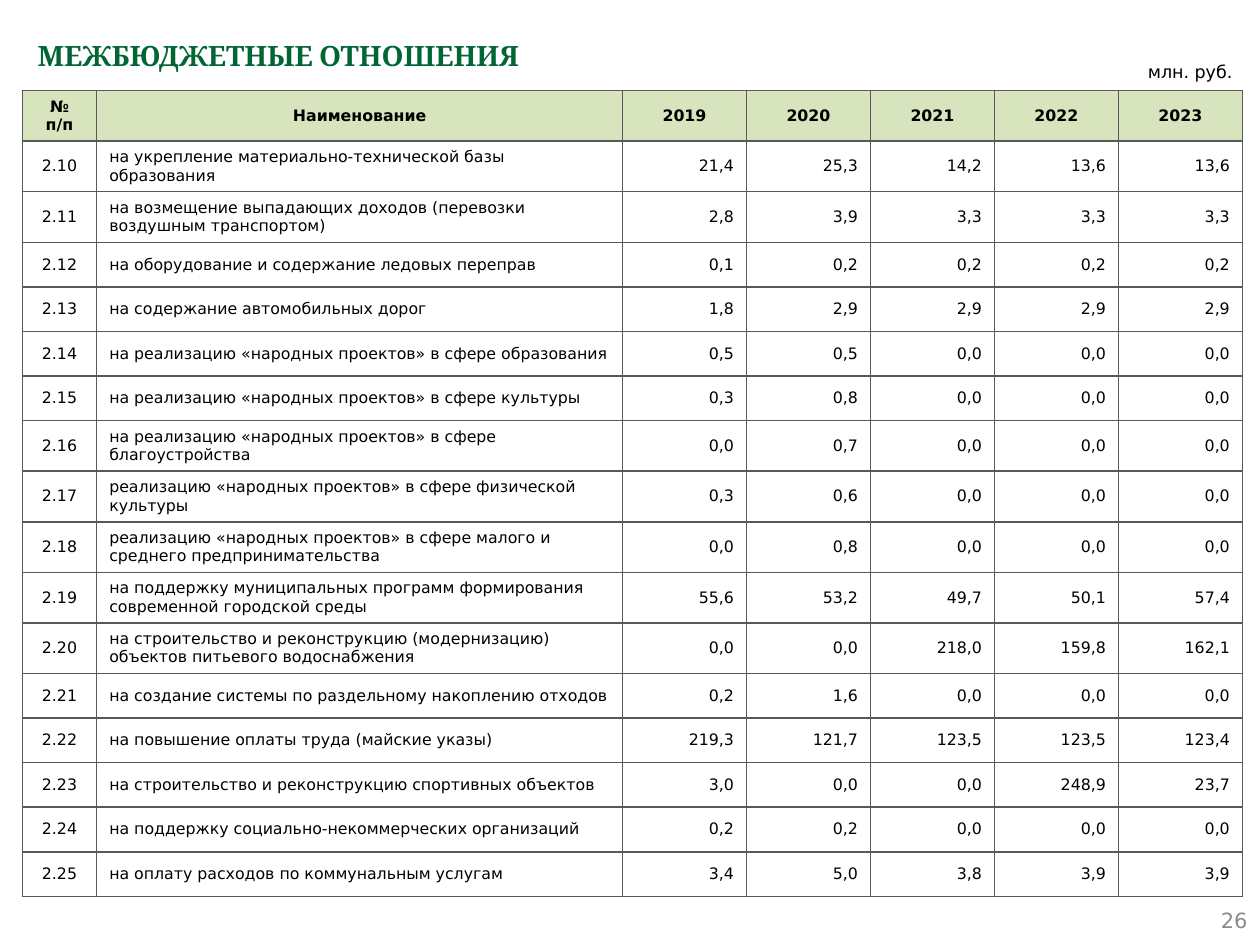
import pptx
import pptx.util
import pptx.dml.color
import pptx.enum.text
import pptx.enum.shapes
import pptx.oxml
import pptx.oxml.ns

Pt = pptx.util.Pt
ALIGN = pptx.enum.text.PP_ALIGN
MIDDLE = pptx.enum.text.MSO_ANCHOR.MIDDLE
SANS = "DejaVu Sans"
WIDTHS = [42.5, 300.5] + [70.85] * 5
SHORT, TALL = 25.5, 28.4
HEAD = ["№ п/п", "Наименование", "2019", "2020", "2021", "2022", "2023"]
FIRST = 10
ROWS = [
    ("на укрепление материально-технической базы образования", "21,4 25,3 14,2 13,6 13,6"),
    ("на возмещение выпадающих доходов (перевозки воздушным транспортом)", "2,8 3,9 3,3 3,3 3,3"),
    ("на оборудование и содержание ледовых переправ", "0,1 0,2 0,2 0,2 0,2"),
    ("на содержание автомобильных дорог", "1,8 2,9 2,9 2,9 2,9"),
    ("на реализацию «народных проектов» в сфере образования", "0,5 0,5 0,0 0,0 0,0"),
    ("на реализацию «народных проектов» в сфере культуры", "0,3 0,8 0,0 0,0 0,0"),
    ("на реализацию «народных проектов» в сфере благоустройства", "0,0 0,7 0,0 0,0 0,0"),
    ("реализацию «народных проектов» в сфере физической культуры", "0,3 0,6 0,0 0,0 0,0"),
    ("реализацию «народных проектов» в сфере малого и среднего предпринимательства",
     "0,0 0,8 0,0 0,0 0,0"),
    ("на поддержку муниципальных программ формирования современной городской среды",
     "55,6 53,2 49,7 50,1 57,4"),
    ("на строительство и реконструкцию (модернизацию) объектов питьевого водоснабжения",
     "0,0 0,0 218,0 159,8 162,1"),
    ("на создание системы по раздельному накоплению отходов", "0,2 1,6 0,0 0,0 0,0"),
    ("на повышение оплаты труда (майские указы)", "219,3 121,7 123,5 123,5 123,4"),
    ("на строительство и реконструкцию спортивных объектов", "3,0 0,0 0,0 248,9 23,7"),
    ("на поддержку социально-некоммерческих организаций", "0,2 0,2 0,0 0,0 0,0"),
    ("на оплату расходов по коммунальным услугам", "3,4 5,0 3,8 3,9 3,9"),
]
TALL_ROWS = {0, 1, 2, 7, 8, 9, 10, 11}


def color(code):
    return pptx.dml.color.RGBColor.from_string(code)


def write(frame, text, size, align, code="000000", font=SANS, bold=False):
    frame.text = text
    para = frame.paragraphs[0]
    para.alignment = align
    for run in para.runs:
        run.font.size = Pt(size)
        run.font.name = font
        run.font.bold = bold
        run.font.color.rgb = color(code)
    return para


def add_text(slide, box, text, size, align, **style):
    frame = slide.shapes.add_textbox(*map(Pt, box)).text_frame
    frame.word_wrap = True
    return frame, write(frame, text, size, align, **style)


def add_unit(slide, box, text):
    kind = pptx.enum.shapes.MSO_SHAPE.PENTAGON
    shape = slide.shapes.add_shape(kind, *map(Pt, box))
    shape.adjustments[0] = 0
    shape.shadow.inherit = False
    shape.fill.background()
    shape.line.fill.background()
    frame = shape.text_frame
    frame.word_wrap = True
    frame.vertical_anchor = MIDDLE
    write(frame, text, 10, ALIGN.RIGHT)


def edge(cell, code, width):
    props = cell._tc.get_or_add_tcPr()
    for place, side in enumerate(("lnL", "lnR", "lnT", "lnB")):
        line = pptx.oxml.parse_xml(
            f'<a:{side} {pptx.oxml.ns.nsdecls("a")} w="{Pt(width)}">'
            f'<a:solidFill><a:srgbClr val="{code}"/></a:solidFill></a:{side}>')
        props.insert(place, line)


def fill_cell(cell, text, align, head):
    write(cell.text_frame, text, 9, align, bold=head)
    cell.vertical_anchor = MIDDLE
    if head:
        cell.fill.solid()
        cell.fill.fore_color.rgb = color("D7E4BD")
    else:
        cell.fill.background()
    edge(cell, "595959", 1)


def add_grid(slide, left, top):
    lines = [HEAD] + [[f"2.{num}", name, *vals.split()]
                      for num, (name, vals) in enumerate(ROWS, FIRST)]
    highs = [TALL if row in TALL_ROWS else SHORT for row in range(len(lines))]
    box = map(Pt, (left, top, sum(WIDTHS), sum(highs)))
    table = slide.shapes.add_table(len(lines), len(HEAD), *box).table
    table.horz_banding = False
    for col, width in zip(table.columns, WIDTHS):
        col.width = Pt(width)
    body = [ALIGN.CENTER, ALIGN.LEFT] + [ALIGN.RIGHT] * 5
    for row, (line, high) in enumerate(zip(lines, highs)):
        table.rows[row].height = Pt(high)
        for col, text in enumerate(line):
            align = body[col] if row else ALIGN.CENTER
            fill_cell(table.cell(row, col), text, align, row == 0)


def main():
    deck = pptx.Presentation()
    deck.slide_width, deck.slide_height = Pt(720), Pt(540)
    slide = deck.slides.add_slide(deck.slide_layouts[6])
    title = add_text(slide, (14.4, 14.4, 692, 57), "МЕЖБЮДЖЕТНЫЕ ОТНОШЕНИЯ", 16,
                     ALIGN.LEFT, code="006633", font="Cambria", bold=True)[1]
    title.line_spacing = 1.2
    page = add_text(slide, (552, 511.2, 168, 28.8), "26", 12, ALIGN.RIGHT, code="8C8C8C")[0]
    page.vertical_anchor = MIDDLE
    add_unit(slide, (622, 33.1, 89.3, 15.1), "млн. руб.")
    add_grid(slide, 12.75, 51.8)
    deck.save("out.pptx")


if __name__ == "__main__":
    main()
